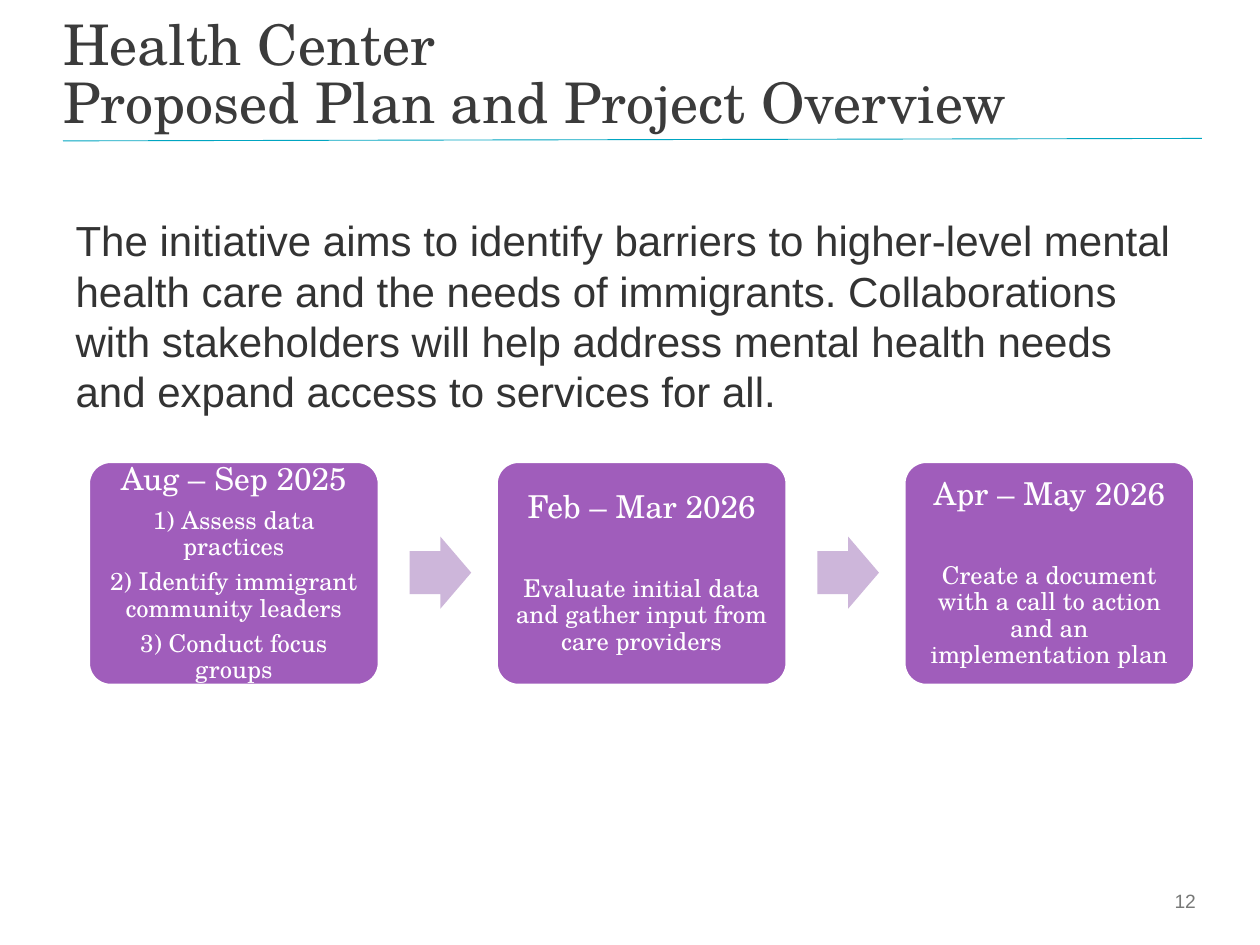
from lxml.etree import SubElement as Sub
from pptx import Presentation
from pptx.dml.color import RGBColor
from pptx.enum.shapes import MSO_CONNECTOR as Link, MSO_SHAPE as Kind
from pptx.enum.text import MSO_ANCHOR as Anchor, MSO_AUTO_SIZE as Fit, PP_ALIGN as Align
from pptx.oxml.ns import qn
from pptx.util import Cm, Pt

WHITE = RGBColor(0xFF, 0xFF, 0xFF)
DARK = RGBColor(0x3B, 0x3B, 0x3B)
INK = RGBColor(0x33, 0x33, 0x33)
GREY = RGBColor(0x77, 0x78, 0x77)
TEAL = RGBColor(0x00, 0xA5, 0xC1)
PURPLE = RGBColor(0xA0, 0x5D, 0xBB)
LILAC = RGBColor(0xCD, 0xB6, 0xDA)
SERIF, SANS = "TeX Gyre Schola", "Arial"

TITLE = ["Health Center", "Proposed Plan and Project Overview"]
AIM = ("The initiative aims to identify barriers to higher-level mental health care "
       "and the needs of immigrants. Collaborations with stakeholders will help address "
       "mental health needs and expand access to services for all.")
STEPS = [
    ("Aug – Sep 2025", 6.3, ["1) Assess data practices",
                             "2) Identify immigrant community leaders",
                             "3) Conduct focus groups"]),
    ("Feb – Mar 2026", 29.2, ["Evaluate initial data and gather input from care providers"]),
    ("Apr – May 2026", 29.2, ["Create a document with a call to action "
                              "and an implementation plan"]),
]
LEFT, TOP, WIDE, HIGH, PITCH = 1.78, 9.3, 5.87, 4.52, 8.22


def place(shape, x, y, w, h):
    shape.left, shape.top, shape.width, shape.height = Cm(x), Cm(y), Cm(w), Cm(h)


def inset(frame, size):
    frame.margin_left = frame.margin_right = Cm(size)
    frame.margin_top = frame.margin_bottom = Cm(size)


def add_run(para, text, size, face, color):
    run = para.add_run()
    run.text = text
    font = run.font
    font.size, font.name, font.color.rgb = Pt(size), face, color


def add_title(slide):
    shape = slide.shapes.title
    place(shape, 1.27, 0.36, 22.86, 2.36)
    frame = shape.text_frame
    frame.auto_size = Fit.NONE
    frame.vertical_anchor = Anchor.BOTTOM
    inset(frame, 0)
    para = frame.paragraphs[0]
    para.alignment, para.line_spacing = Align.LEFT, Pt(33)
    for num, text in enumerate(TITLE):
        if num:
            para.add_line_break()
        add_run(para, text, 32, SERIF, DARK)


def add_rule(slide):
    rule = slide.shapes.add_connector(Link.STRAIGHT, Cm(1.27), Cm(2.84), Cm(24.23), Cm(2.79))
    rule.line.color.rgb, rule.line.width = TEAL, Pt(0.5)
    Sub(rule._element.spPr, qn("a:effectLst"))


def add_body(slide):
    shape = slide.placeholders[1]
    place(shape, 1.27, 4.2, 22.86, 4.37)
    frame = shape.text_frame
    frame.auto_size = Fit.NONE
    para = frame.paragraphs[0]
    props = para._p.get_or_add_pPr()
    props.set("marL", "0")
    props.set("indent", "0")
    Sub(props, qn("a:buNone"))
    para.space_before, para.line_spacing = Pt(0), Pt(28.8)
    add_run(para, AIM, 24, SANS, INK)


def add_page(slide):
    box = slide.shapes.add_textbox(Cm(18.44), Cm(17.65), Cm(5.92), Cm(1.02))
    frame = box.text_frame
    frame.word_wrap, frame.vertical_anchor = True, Anchor.MIDDLE
    para = frame.paragraphs[0]
    para.alignment = Align.RIGHT
    add_run(para, "12", 11, SANS, GREY)


def add_form(slide, kind, x, y, w, h, fill):
    shape = slide.shapes.add_shape(kind, Cm(x), Cm(y), Cm(w), Cm(h))
    shape.shadow.inherit = False
    shape.fill.solid()
    shape.fill.fore_color.rgb = fill
    shape.line.fill.background()
    return shape


def add_card(slide, x, head, gap, items):
    card = add_form(slide, Kind.ROUNDED_RECTANGLE, x, TOP, WIDE, HIGH, PURPLE)
    card.adjustments[0] = 0.1
    card.line.color.rgb, card.line.width = WHITE, Pt(2)
    frame = card.text_frame
    frame.word_wrap, frame.vertical_anchor = True, Anchor.MIDDLE
    inset(frame, 0.18)
    rows = [(head, 18, gap)] + [(item, 14, 4.9) for item in items]
    for num, (text, size, after) in enumerate(rows):
        para = frame.add_paragraph() if num else frame.paragraphs[0]
        para.alignment, para.line_spacing = Align.CENTER, 0.9
        para.space_after = Pt(after)
        add_run(para, text, size, SERIF, WHITE)


def add_arrow(slide, x):
    arrow = add_form(slide, Kind.RIGHT_ARROW, x, 10.82, 1.24, 1.45, LILAC)
    arrow.adjustments[0], arrow.adjustments[1] = 0.6, 0.5


def main():
    deck = Presentation()
    deck.slide_width, deck.slide_height = Cm(25.4), Cm(19.05)
    slide = deck.slides.add_slide(deck.slide_layouts[1])
    add_rule(slide)
    add_title(slide)
    add_page(slide)
    add_body(slide)
    for num, (head, gap, items) in enumerate(STEPS):
        x = LEFT + num * PITCH
        if num:
            add_arrow(slide, x - 1.74)
        add_card(slide, x, head, gap, items)
    deck.save("out.pptx")


if __name__ == "__main__":
    main()
